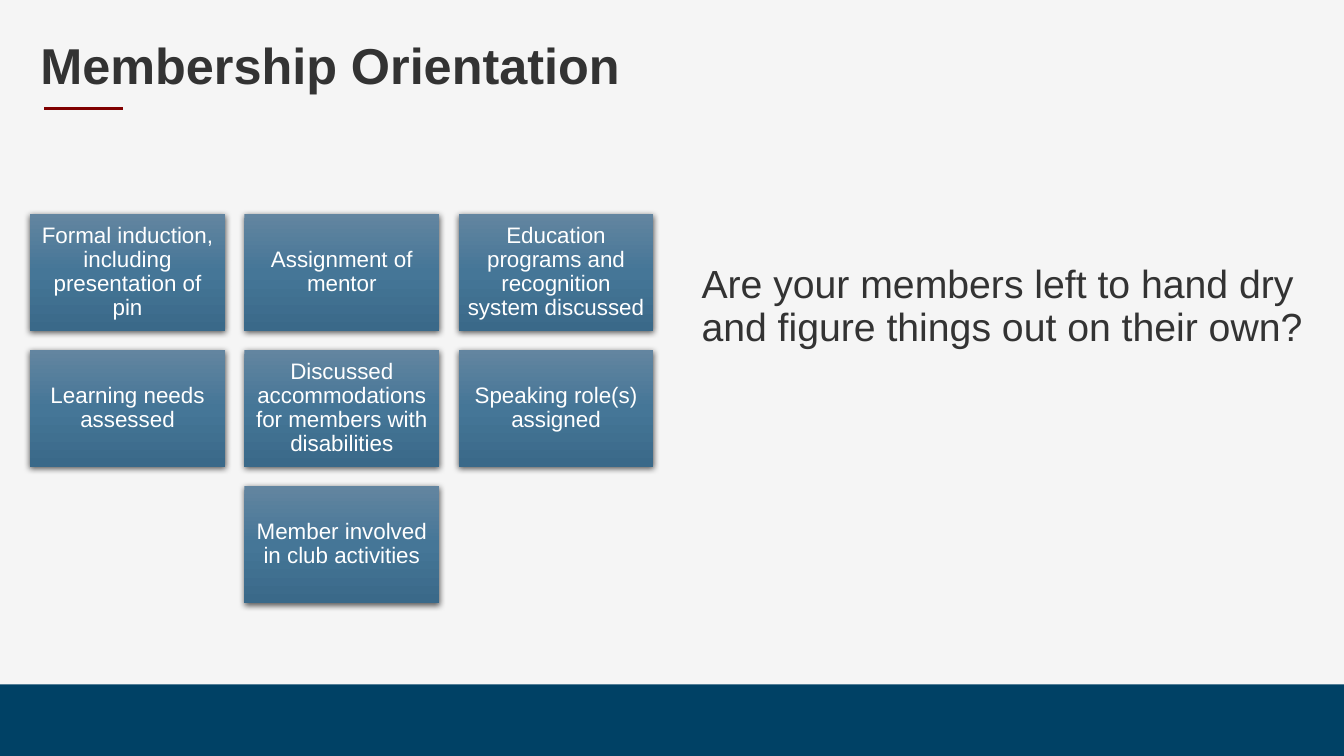
from dataclasses import dataclass
from typing import Any

from lxml import etree
from pptx import Presentation
from pptx.dml.color import RGBColor
from pptx.enum.shapes import MSO_CONNECTOR, MSO_SHAPE
from pptx.enum.text import MSO_ANCHOR, MSO_AUTO_SIZE, PP_ALIGN
from pptx.oxml.ns import qn
from pptx.util import Inches, Pt

RECT, LINE = MSO_SHAPE.RECTANGLE, MSO_CONNECTOR.STRAIGHT
TOP, MIDDLE = MSO_ANCHOR.TOP, MSO_ANCHOR.MIDDLE
LEFT, CENTER = PP_ALIGN.LEFT, PP_ALIGN.CENTER

PAPER = RGBColor(0xF5, 0xF5, 0xF5)
NAVY = RGBColor(0x00, 0x41, 0x65)
MAROON = RGBColor(0x80, 0x00, 0x00)
INK = RGBColor(0x33, 0x33, 0x33)
WHITE = RGBColor(0xFF, 0xFF, 0xFF)
BLACK = RGBColor(0x00, 0x00, 0x00)
SHADES = {
    0: RGBColor(0x63, 0x85, 0xA0),
    50: RGBColor(0x45, 0x76, 0x97),
    100: RGBColor(0x3A, 0x69, 0x89),
}


@dataclass(frozen=True)
class Box:
    x: float
    y: float
    w: float
    h: float

    def place(self) -> tuple[int, int, int, int]:
        return Inches(self.x), Inches(self.y), Inches(self.w), Inches(self.h)


@dataclass(frozen=True)
class Style:
    size: float
    color: RGBColor
    align: Any = LEFT
    anchor: Any = TOP
    bold: bool = False
    after: float = 0
    inset: tuple[float, float] = (0.1, 0.05)


WIDE, HIGH = 13.33, 7.5
BAND = Box(0, 6.79, WIDE, 0.71)
HEAD = Box(0.3, 0.32, 12.74, 0.71)
BODY = Box(6.86, 2.58, 6.17, 3.84)
TILE = Box(0.3, 2.12, 1.93, 1.16)
COL, ROW = 2.125, 1.35
RULE_X, RULE_Y, RULE_W = 0.44, 1.08, 0.78

TITLE = Style(36, INK, anchor=MIDDLE, bold=True)
ASK = Style(28, INK)
LABEL = Style(16, WHITE, CENTER, MIDDLE, after=5.6, inset=(0.07, 0.07))

TOPICS = [
    [
        "Formal induction, including presentation of pin",
        "Assignment of mentor",
        "Education programs and recognition system discussed",
    ],
    [
        "Learning needs assessed",
        "Discussed accommodations for members with disabilities",
        "Speaking role(s) assigned",
    ],
    ["Member involved in club activities"],
]


def assign(target: Any, values: dict[str, Any]) -> None:
    for name, value in values.items():
        setattr(target, name, value)


def write(shape: Any, text: str, style: Style) -> None:
    frame = shape.text_frame
    frame.text = text
    side, edge = map(Inches, style.inset)
    assign(frame, {
        "word_wrap": True, "auto_size": MSO_AUTO_SIZE.NONE,
        "vertical_anchor": style.anchor,
        "margin_left": side, "margin_right": side,
        "margin_top": edge, "margin_bottom": edge,
    })
    line = frame.paragraphs[0]
    assign(line, {
        "alignment": style.align, "line_spacing": 0.9,
        "space_before": Pt(0), "space_after": Pt(style.after),
    })
    font = line.runs[0].font
    assign(font, {"name": "Arial", "size": Pt(style.size), "bold": style.bold})
    font.color.rgb = style.color


def add_rect(slide: Any, box: Box) -> Any:
    shape = slide.shapes.add_shape(RECT, *box.place())
    shape.line.fill.background()
    shape.shadow.inherit = False
    return shape


def node(root: Any, tag: str, **values: Any) -> Any:
    return etree.SubElement(
        root, qn(tag), {key: str(value) for key, value in values.items()})


def shade(shape: Any) -> None:
    """Give the shape a downward three-stop gradient and a soft shadow."""
    shape.fill.gradient()
    shape.fill.gradient_angle = 270
    props = shape._element.spPr
    stops = props.find(".//" + qn("a:gsLst"))
    stops.clear()
    for share, color in SHADES.items():
        stop = node(stops, "a:gs", pos=share * 1000)
        node(stop, "a:srgbClr", val=color)
    cast = node(props.find(qn("a:effectLst")), "a:outerShdw",
                blurRad=Pt(4.5), dist=Pt(1.5), dir=90 * 60000,
                algn="ctr", rotWithShape=0)
    tint = node(cast, "a:srgbClr", val=BLACK)
    node(tint, "a:alpha", val=63000)


def add_tiles(slide: Any) -> None:
    """Lay out the topics by row, centring a row that is not full."""
    most = max(map(len, TOPICS))
    for row, topics in enumerate(TOPICS):
        start = (most - len(topics)) / 2
        for col, topic in enumerate(topics, 0):
            box = Box(TILE.x + (start + col) * COL, TILE.y + row * ROW,
                      TILE.w, TILE.h)
            tile = add_rect(slide, box)
            shade(tile)
            write(tile, topic, LABEL)


def add_rule(slide: Any) -> None:
    rule = slide.shapes.add_connector(
        LINE, Inches(RULE_X), Inches(RULE_Y),
        Inches(RULE_X + RULE_W), Inches(RULE_Y))
    rule.line.color.rgb = MAROON
    rule.line.width = Pt(2.25)
    node(rule._element.spPr, "a:effectLst")


def main() -> None:
    deck = Presentation()
    assign(deck, {"slide_width": Inches(WIDE), "slide_height": Inches(HIGH)})
    slide = deck.slides.add_slide(deck.slide_layouts[5])
    back = slide.background.fill
    back.solid()
    back.fore_color.rgb = PAPER

    band = add_rect(slide, BAND)
    band.fill.solid()
    band.fill.fore_color.rgb = NAVY
    add_rule(slide)

    title = slide.shapes.title
    assign(title, dict(zip(("left", "top", "width", "height"), HEAD.place())))
    write(title, "Membership Orientation", TITLE)
    ask = slide.shapes.add_textbox(*BODY.place())
    write(ask, "Are your members left to hand dry and figure things out "
          "on their own?", ASK)
    add_tiles(slide)
    deck.save("out.pptx")


if __name__ == "__main__":
    main()
